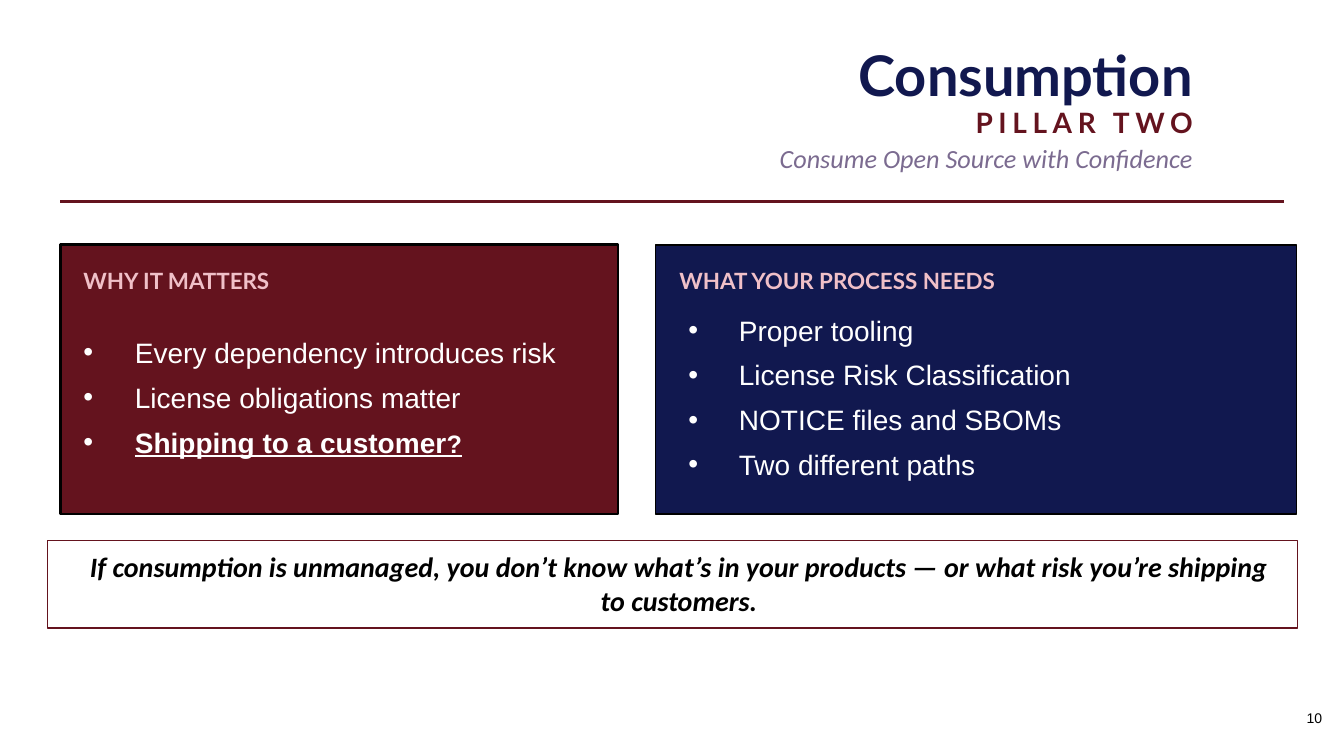
"""Build the Consumption pillar slide."""
from dataclasses import dataclass

from lxml.etree import SubElement
from pptx import Presentation
from pptx.dml.color import RGBColor
from pptx.enum.shapes import MSO_CONNECTOR, MSO_SHAPE
from pptx.enum.text import MSO_ANCHOR, MSO_AUTO_SIZE, PP_ALIGN
from pptx.oxml.ns import qn
from pptx.util import Inches, Pt

WINE = RGBColor(0x64, 0x13, 0x1E)
NAVY = RGBColor(0x11, 0x18, 0x4F)
MAUVE = RGBColor(0x7B, 0x6B, 0x90)
PINK = RGBColor(0xF0, 0xC0, 0xC8)
WHITE = RGBColor(0xFF, 0xFF, 0xFF)
BLACK = RGBColor(0x00, 0x00, 0x00)

Box = tuple[float, float, float, float]


@dataclass(frozen=True)
class Style:
    """Look of a piece of text."""
    font: str
    size: float
    color: RGBColor
    bold: bool = False
    italic: bool = False
    align: PP_ALIGN = PP_ALIGN.LEFT


@dataclass(frozen=True)
class Label:
    """A text with its place and look."""
    text: str
    box: Box
    style: Style


@dataclass(frozen=True)
class Panel:
    """A filled card with a heading and bullets."""
    box: Box
    fill: RGBColor
    border: float
    head: Label
    items: tuple[str, ...]
    body: Box
    indent: float


HEAD = Style("Lato", 16, PINK, bold=True)
ITEM = Style("Arial", 20, WHITE)
TITLE = Label("Consumption", (0.6, 0.27, 11.33, 0.93),
              Style("Lato", 40, NAVY, bold=True, align=PP_ALIGN.RIGHT))
PILLAR = Label("PILLAR TWO", (0.67, 0.96, 11.26, 0.51),
               Style("Lato", 20, WINE, bold=True, align=PP_ALIGN.RIGHT))
MOTTO = Label("Consume Open Source with Confidence", (0.6, 1.3, 11.33, 0.53),
              Style("Calibri", 18.7, MAUVE, italic=True, align=PP_ALIGN.RIGHT))
CLAIM = Label("If consumption is unmanaged, you don’t know what’s in your products "
              "— or what risk you’re shipping to customers.",
              (0.67, 5.41, 12.13, 0.76),
              Style("Calibri", 20, BLACK, bold=True, italic=True, align=PP_ALIGN.CENTER))
NUMBER = Label("10", (12.86, 6.99, 0.48, 0.23), Style("Arial", 10, BLACK))
WHY = Panel((0.6, 2.43, 5.53, 2.67), WINE, 2,
            Label("WHY IT MATTERS", (0.73, 2.53, 5.27, 0.51), HEAD),
            ("Every dependency introduces risk", "License obligations matter",
             "Shipping to a customer"),
            (0.73, 3.04, 5.2, 1.8), 0.51)
NEEDS = Panel((6.5, 2.43, 6.36, 2.67), NAVY, 1,
              Label("WHAT YOUR PROCESS NEEDS", (6.64, 2.53, 6.09, 0.51), HEAD),
              ("Proper tooling", "License Risk Classification",
               "NOTICE files and SBOMs", "Two different paths"),
              (6.73, 3.04, 6.16, 1.8), 0.5)


def place(box: Box) -> list[int]:
    """Turn a box in inches into lengths."""
    return [Inches(side) for side in box]


def paint(run, style: Style) -> None:
    """Format one run."""
    font = run.font
    font.name, font.size = style.font, Pt(style.size)
    font.bold, font.italic = style.bold, style.italic
    font.color.rgb = style.color


def write(shape, text: str, style: Style, anchor=MSO_ANCHOR.MIDDLE) -> None:
    """Fill a shape with styled lines."""
    frame = shape.text_frame
    frame.word_wrap = True
    frame.auto_size = MSO_AUTO_SIZE.NONE
    frame.vertical_anchor = anchor
    frame.text = text
    for line in frame.paragraphs:
        line.alignment = style.align
        for run in line.runs:
            paint(run, style)


def add_label(slide, label: Label, anchor=MSO_ANCHOR.MIDDLE):
    """Add a text box."""
    shape = slide.shapes.add_textbox(*place(label.box))
    write(shape, label.text, label.style, anchor)
    return shape


def add_card(slide, box: Box, fill: RGBColor, edge: RGBColor, width: float) -> None:
    """Add a plain bordered rectangle."""
    card = slide.shapes.add_shape(MSO_SHAPE.RECTANGLE, *place(box))
    card.shadow.inherit = False
    card.fill.solid()
    card.fill.fore_color.rgb = fill
    card.line.color.rgb = edge
    card.line.width = Pt(width)


def add_panel(slide, panel: Panel):
    """Add a card with heading and bullets, and return its list."""
    add_card(slide, panel.box, panel.fill, BLACK, panel.border)
    add_label(slide, panel.head)
    body = add_label(slide, Label("\n".join(panel.items), panel.body, ITEM))
    for line in body.text_frame.paragraphs:
        props = line._p.get_or_add_pPr()
        props.set("marL", str(Inches(panel.indent)))
        props.set("indent", str(-Inches(panel.indent)))
        SubElement(props, qn("a:buFont")).set("typeface", "Arial")
        SubElement(props, qn("a:buChar")).set("char", "•")
        line.space_after = Pt(8)
    return body


def stress(line) -> None:
    """Underline the closing question and add its mark."""
    mark = line.add_run()
    mark.text = "?"
    for run in line.runs:
        paint(run, ITEM)
        run.font.bold = run.font.underline = True
    mark.font.size = Pt(18)


def add_rule(slide) -> None:
    """Add the line below the header."""
    rule = slide.shapes.add_connector(
        MSO_CONNECTOR.STRAIGHT, *place((0.6, 2, 12.73, 2)))
    rule.line.color.rgb = WINE
    rule.line.width = Pt(2)
    SubElement(rule._element.spPr, qn("a:effectLst"))


def main() -> None:
    """Build and save the deck."""
    deck = Presentation()
    deck.slide_width, deck.slide_height = Inches(13.33), Inches(7.5)
    slide = deck.slides.add_slide(deck.slide_layouts[5])
    title = slide.shapes.title
    title.left, title.top, title.width, title.height = place(TITLE.box)
    write(title, TITLE.text, TITLE.style)
    add_label(slide, PILLAR).text_frame.paragraphs[0].runs[0].font._element.set("spc", "400")
    add_label(slide, MOTTO)
    stress(add_panel(slide, WHY).text_frame.paragraphs[-1])
    add_panel(slide, NEEDS)
    add_card(slide, (0.47, 5.36, 12.4, 0.87), WHITE, WINE, 1)
    add_label(slide, CLAIM)
    add_rule(slide)
    add_label(slide, NUMBER, MSO_ANCHOR.TOP)
    deck.save("out.pptx")


if __name__ == "__main__":
    main()
